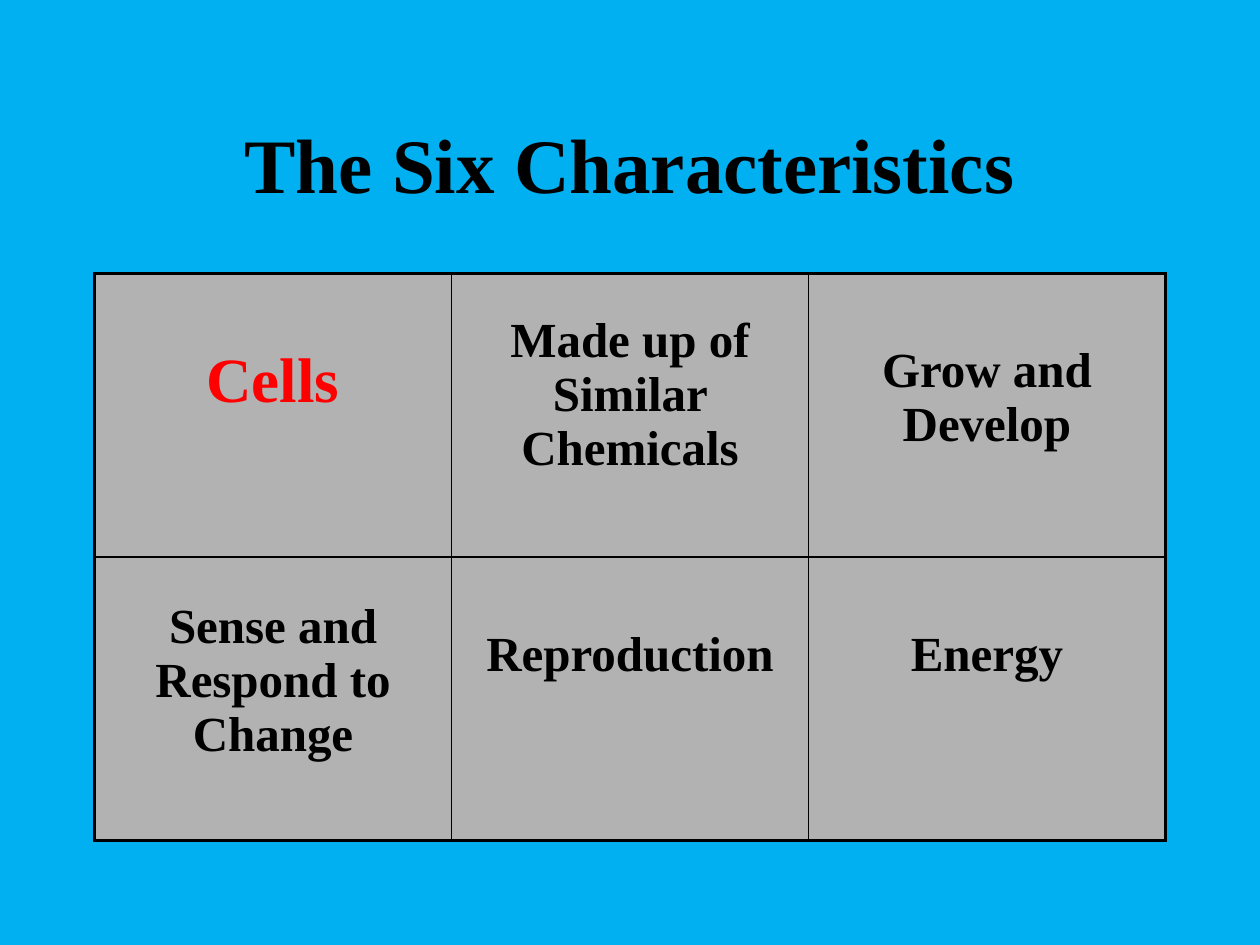
from dataclasses import dataclass

from lxml import etree
from pptx import Presentation
from pptx import util as u
from pptx.dml.color import RGBColor
from pptx.enum import text
from pptx.oxml.ns import qn

COLORS = {"sky": "00B0F0", "gray": "B2B2B2", "black": "000000", "red": "FF0000"}
FONT = "Times New Roman"
ROWS, COLUMNS = 2, 3
OUTER, INNER = 2.25, 1


@dataclass
class Characteristic:
    label: str
    top_margin: float
    size: int = 28
    color: str = "black"


CHARACTERISTICS = [
    Characteristic("Cells", 0.58, 36, "red"),
    Characteristic("Made up of Similar Chemicals", 0.32),
    Characteristic("Grow and Develop", 0.56),
    Characteristic("Sense and Respond to Change", 0.34),
    Characteristic("Reproduction", 0.56),
    Characteristic("Energy", 0.56),
]


def rgb(name: str) -> RGBColor:
    return RGBColor.from_string(COLORS[name])


def write(frame, label: str, size: int, color: str) -> None:
    """Fill a text frame with one centred bold paragraph."""
    para = frame.paragraphs[0]
    para.alignment = text.PP_ALIGN.CENTER
    span = para.add_run()
    span.text = label
    for name, value in {"name": FONT, "size": u.Pt(size), "bold": True}.items():
        setattr(span.font, name, value)
    span.font.color.rgb = rgb(color)


def set_borders(cell, widths: dict[str, float]) -> None:
    """Draw solid black borders; they must precede the cell's fill."""
    properties = cell._tc.get_or_add_tcPr()
    for index, (side, width) in enumerate(widths.items()):
        line = etree.Element(qn(f"a:ln{side}"), w=str(u.Pt(width)))
        fill = etree.SubElement(line, qn("a:solidFill"))
        etree.SubElement(fill, qn("a:srgbClr"), val=COLORS["black"])
        properties.insert(index, line)


def draw_cell(cell, item: Characteristic, row: int, column: int) -> None:
    cell.fill.solid()
    cell.fill.fore_color.rgb = rgb("gray")
    cell.margin_top = u.Inches(item.top_margin)
    write(cell.text_frame, item.label, item.size, item.color)
    set_borders(cell, {
        "L": OUTER if column == 0 else INNER,
        "R": OUTER if column == COLUMNS - 1 else INNER,
        "T": OUTER if row == 0 else INNER,
        "B": OUTER if row == ROWS - 1 else INNER,
    })


def main() -> None:
    deck = Presentation()
    deck.slide_width, deck.slide_height = u.Inches(10), u.Inches(7.5)
    page = deck.slides.add_slide(deck.slide_layouts[5])
    page.background.fill.solid()
    page.background.fill.fore_color.rgb = rgb("sky")

    # Title
    title = page.shapes.title
    place = {"left": 0.75, "top": 0.67, "width": 8.5, "height": 1.25}
    for name, value in place.items():
        setattr(title, name, u.Inches(value))
    title.text_frame.auto_size = text.MSO_AUTO_SIZE.NONE
    title.text_frame.vertical_anchor = text.MSO_ANCHOR.MIDDLE
    write(title.text_frame, "The Six Characteristics", 44, "black")

    # Table of characteristics
    table = page.shapes.add_table(
        ROWS, COLUMNS, u.Inches(0.75), u.Inches(2.17), u.Inches(8.5), u.Inches(4.5)
    ).table
    table.first_row = table.horz_banding = False
    for index, item in enumerate(CHARACTERISTICS):
        row, column = divmod(index, COLUMNS)
        draw_cell(table.cell(row, column), item, row, column)

    deck.save("out.pptx")


if __name__ == "__main__":
    main()
